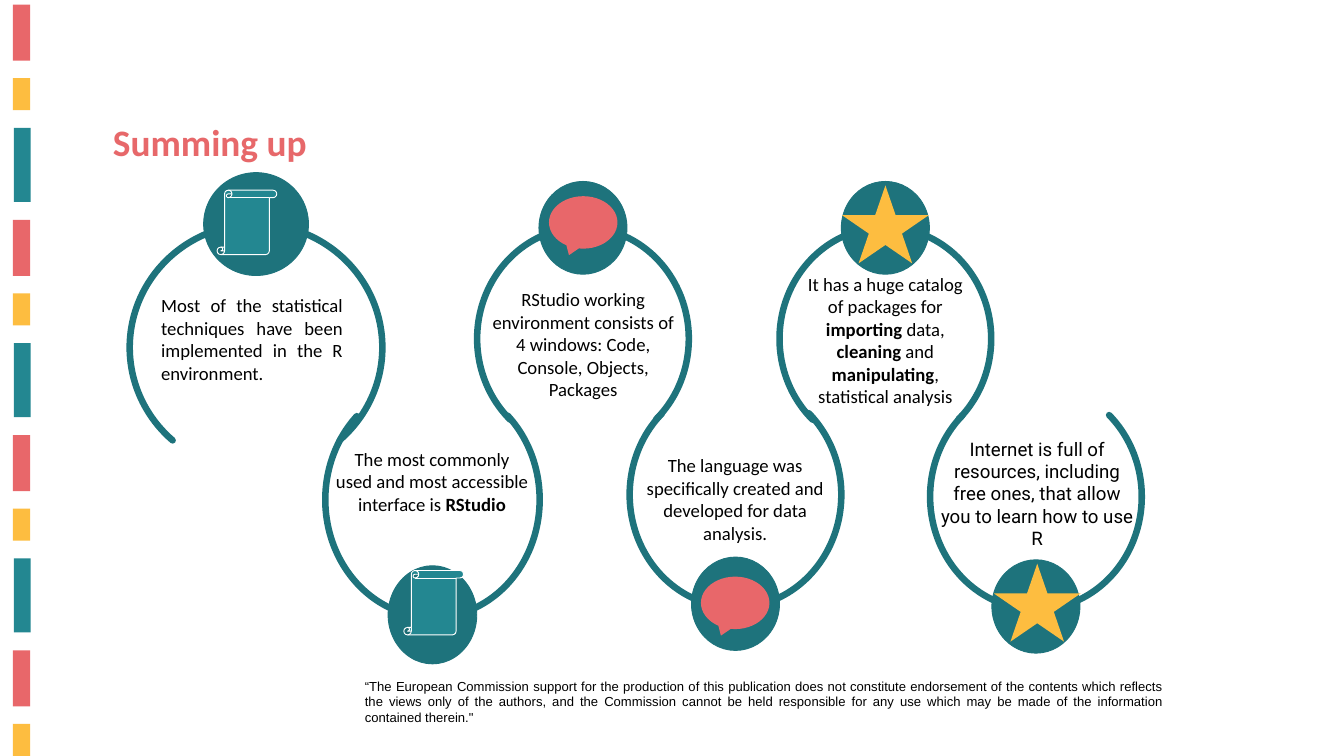
from typing import NamedTuple, Optional

from pptx import Presentation
from pptx.dml import color
from pptx.enum import shapes, text
from pptx.util import Pt

TEAL, DARK_TEAL = "238791", "1E737C"
RED, YELLOW, WHITE, BLACK = "E8676A", "FDBD40", "FFFFFF", "000000"
PRESET = shapes.MSO_SHAPE
ALIGN = text.PP_ALIGN


class Box(NamedTuple):
    x: float
    y: float
    w: float
    h: float


class Run(NamedTuple):
    text: str
    bold: bool = False


class Icon(NamedTuple):
    preset: PRESET
    w: float
    h: float
    fill: str
    line: Optional[str] = None


class Stripe(NamedTuple):
    x: float
    y: float
    w: float
    h: float
    fill: str


class Node(NamedTuple):
    arc: Box
    badge_y: float
    badge_w: float
    badge_h: float
    icon: Icon
    icon_x: float
    icon_y: float
    text_box: Box
    runs: list[Run]
    flipped: bool = False
    align: ALIGN = ALIGN.CENTER
    font: str = "Calibri"


SCROLL = Icon(PRESET.VERTICAL_SCROLL, 64, 69, TEAL, WHITE)
BUBBLE = Icon(PRESET.OVAL_CALLOUT, 73.4, 56.2, RED)
STAR = Icon(PRESET.STAR_5_POINT, 92.9, 83.5, YELLOW)

# Stripe group that repeats down the left edge
STRIPE_STEP = 230.6
STRIPES = [
    Stripe(13.8, 5, 18.6, 60, RED),
    Stripe(13.8, 83.7, 18.6, 34.4, YELLOW),
    Stripe(14.9, 137, 18, 79.4, TEAL),
]

NODES = [
    Node(Box(139, 239.8, 270.7, 265), 185, 112.3, 110.2, SCROLL, 232.6, 203.8,
         Box(165.6, 311.8, 208.8, 128),
         [Run("Most of the statistical techniques have been implemented "
              "in the R environment.")], align=ALIGN.JUSTIFY),
    Node(Box(348.5, 409, 229.7, 252.7), 606.2, 95, 105.1, SCROLL, 432.7, 611.3,
         Box(352, 476, 221.8, 104.4),
         [Run("The most commonly used and most accessible interface is "),
          Run("RStudio", True)], flipped=True),
    Node(Box(511.2, 243.4, 226.8, 239), 194.4, 94.3, 99.4, BUBBLE, 588.2, 210.2,
         Box(514, 305.3, 221.8, 152.6),
         [Run("RStudio working environment consists of 4 windows: Code, "
              "Console, Objects, Packages")]),
    Node(Box(674.6, 409, 226.8, 242), 596.9, 94.3, 100, BUBBLE, 751, 617.8,
         Box(683.3, 483.1, 208.8, 104.4),
         [Run("The language was specifically created and developed for "
              "data analysis.")], flipped=True),
    Node(Box(835.2, 243.4, 226.8, 239), 194.4, 94.3, 99.4, STAR, 902.2, 198.7,
         Box(849.6, 288.7, 198, 177.1),
         [Run("It has a huge catalog of packages for "), Run("importing", True),
          Run(" data, "), Run("cleaning", True), Run(" and "),
          Run("manipulating", True), Run(", statistical analysis")]),
    Node(Box(996.5, 411.1, 226.8, 242), 599.8, 94.3, 100, STAR, 1064.9, 604,
         Box(1000, 465.1, 222.5, 152.6),
         [Run("Internet is full of resources, including free ones, that allow "
              "you to learn how to use R")], flipped=True, font="Roboto"),
]


def rgb(value: str) -> color.RGBColor:
    return color.RGBColor.from_string(value)


def points(box: Box) -> list[Pt]:
    return [Pt(v) for v in box]


def add_shape(s, preset: PRESET, box: Box, fill: Optional[str] = None,
              line: Optional[str] = None, width: float = 1):
    sp = s.shapes.add_shape(preset, *points(box))
    sp.shadow.inherit = False
    if fill:
        sp.fill.solid()
        sp.fill.fore_color.rgb = rgb(fill)
    else:
        sp.fill.background()
    if line:
        sp.line.color.rgb = rgb(line)
        sp.line.width = Pt(width)
    else:
        sp.line.fill.background()
    return sp


def write(sp, runs: list[Run], size: float, font: str, fill: str,
          align: ALIGN) -> None:
    tf = sp.text_frame
    tf.word_wrap = True
    tf.auto_size = text.MSO_AUTO_SIZE.NONE
    tf.vertical_anchor = text.MSO_ANCHOR.TOP
    p = tf.paragraphs[0]
    p.alignment = align
    for run in runs:
        r = p.add_run()
        r.text = run.text
        r.font.size = Pt(size)
        r.font.name = font
        r.font.bold = run.bold
        r.font.color.rgb = rgb(fill)


def add_node(s, node: Node) -> None:
    # Open ring with round ends
    arc = add_shape(s, PRESET.ARC, node.arc, line=DARK_TEAL, width=7)
    arc.adjustments[0], arc.adjustments[1] = 79.141, 28.684
    arc.rotation = 180 if node.flipped else 0
    arc.line._get_or_add_ln().set("cap", "rnd")
    # Badge centred on the ring, with its icon
    badge_x = node.arc.x + (node.arc.w - node.badge_w) / 2
    add_shape(s, PRESET.OVAL,
              Box(badge_x, node.badge_y, node.badge_w, node.badge_h),
              DARK_TEAL, DARK_TEAL)
    icon = node.icon
    add_shape(s, icon.preset, Box(node.icon_x, node.icon_y, icon.w, icon.h),
              icon.fill, icon.line)
    # Message
    tb = s.shapes.add_textbox(*points(node.text_box))
    write(tb, node.runs, 20, node.font, BLACK, node.align)


def main() -> None:
    prs = Presentation()
    prs.slide_width, prs.slide_height = Pt(1440), Pt(810)
    s = prs.slides.add_slide(prs.slide_layouts[5])

    # Left edge: four groups, the last one cut off by the slide's end
    for i in range(4):
        for stripe in STRIPES:
            y = stripe.y + i * STRIPE_STEP
            if y < 810:
                add_shape(s, PRESET.RECTANGLE,
                          Box(stripe.x, y, stripe.w, stripe.h), stripe.fill)

    # Title
    title = s.shapes.title
    title.left, title.top, title.width, title.height = points(
        Box(113.8, 123.8, 473.8, 55.4))
    write(title, [Run("Summing up", True)], 40, "Calibri", "E7686A", ALIGN.LEFT)

    # Chain of rings
    for node in NODES:
        add_node(s, node)

    # Disclaimer
    tb = s.shapes.add_textbox(*points(Box(383.8, 722.9, 869.8, 58.3)))
    write(tb, [Run("“The European Commission support for the production of this "
                   "publication does not constitute endorsement of the contents "
                   "which reflects the views only of the authors, and the "
                   "Commission cannot be held responsible for any use which may "
                   "be made of the information contained therein.\"")],
          14, "Arial", BLACK, ALIGN.JUSTIFY)

    prs.save("out.pptx")


if __name__ == "__main__":
    main()
